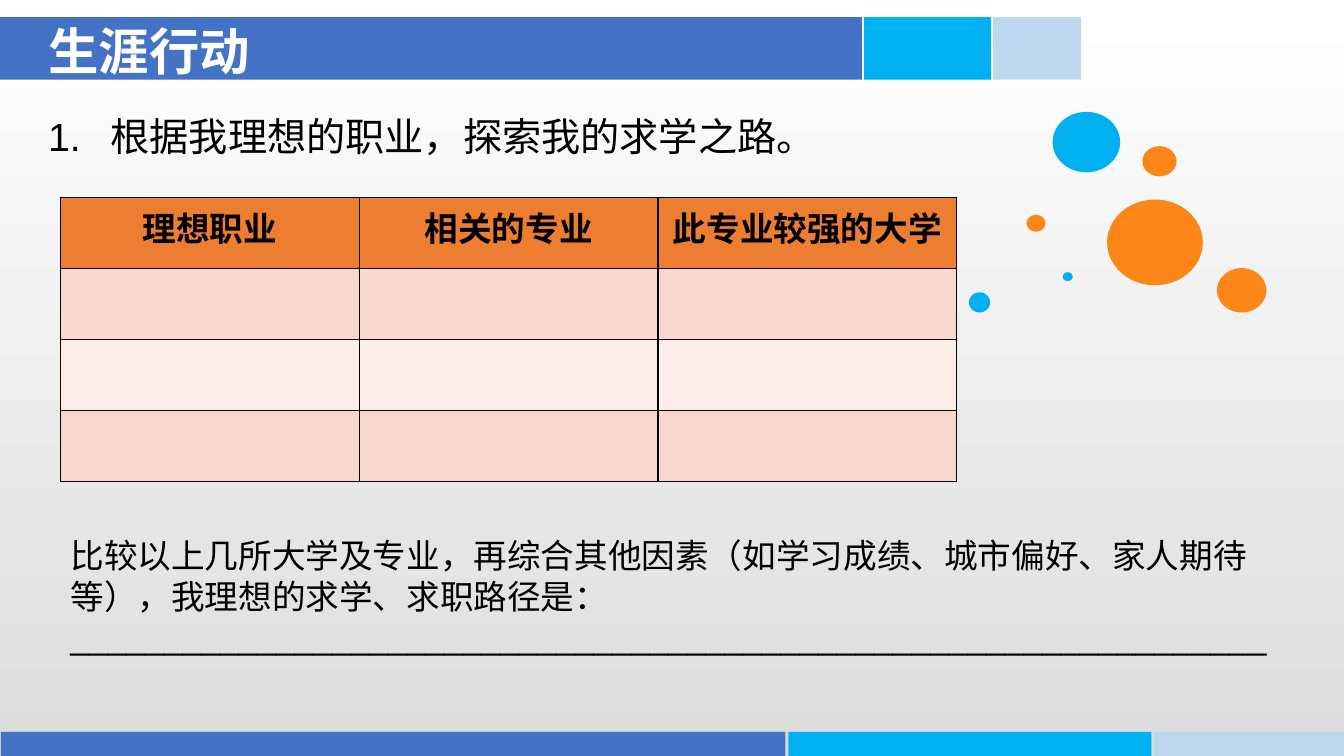
from lxml import etree
from pptx import Presentation
from pptx.dml.color import RGBColor
from pptx.enum.shapes import MSO_SHAPE
from pptx.enum.text import MSO_ANCHOR, PP_ALIGN
from pptx.oxml.ns import qn
from pptx.util import Inches, Pt

RECTANGLE, OVAL = MSO_SHAPE.RECTANGLE, MSO_SHAPE.OVAL
TOP, MIDDLE = MSO_ANCHOR.TOP, MSO_ANCHOR.MIDDLE
CENTER = PP_ALIGN.CENTER

BLACK = RGBColor(0x00, 0x00, 0x00)
WHITE = RGBColor(0xFF, 0xFF, 0xFF)
GREY = RGBColor(0xDC, 0xDC, 0xDC)
BLUE = RGBColor(0x44, 0x72, 0xC4)
CYAN = RGBColor(0x00, 0xB0, 0xF0)
PALE_BLUE = RGBColor(0xBD, 0xD7, 0xEE)
ORANGE = RGBColor(0xFC, 0x86, 0x18)
HEADER_ORANGE = RGBColor(0xED, 0x7D, 0x31)
BAND_DARK = RGBColor(0xF8, 0xD7, 0xCE)
BAND_LIGHT = RGBColor(0xFC, 0xEC, 0xE8)

LATIN = "Arial"
CJK = "Noto Sans CJK SC"

TITLE = "生涯行动"
TASK = "1.\t根据我理想的职业，探索我的求学之路。"
HEADERS = ["理想职业", "相关的专业", "此专业较强的大学"]
BLANK_ROWS = 3
QUESTION = "比较以上几所大学及专业，再综合其他因素（如学习成绩、城市偏好、家人期待等），我理想的求学、求职路径是："
ANSWER_LINE = "_" * 64

# left, top, width, height inside the cluster, colour
BUBBLES = [
    (0.00, 1.79, 0.21, 0.20, CYAN),
    (1.37, 0.87, 0.95, 0.85, ORANGE),
    (0.83, 0.00, 0.67, 0.60, CYAN),
    (2.46, 1.55, 0.49, 0.44, ORANGE),
    (1.72, 0.34, 0.34, 0.30, ORANGE),
    (0.57, 1.02, 0.19, 0.17, ORANGE),
    (0.93, 1.59, 0.10, 0.09, CYAN),
]


def paint_background(slide):
    fill = slide.background.fill
    fill.gradient()
    fill.gradient_angle = 270
    for stop, color in zip(fill.gradient_stops, (WHITE, GREY)):
        stop.color.rgb = color


def add_plain_shape(slide, kind, left, top, width, height, color):
    shape = slide.shapes.add_shape(
        kind, Inches(left), Inches(top), Inches(width), Inches(height))
    shape.shadow.inherit = False
    shape.fill.solid()
    shape.fill.fore_color.rgb = color
    shape.line.fill.background()


def add_band(slide, left, top, height, widths, gap):
    """Lay three coloured bars side by side."""
    for width, color in zip(widths, (BLUE, CYAN, PALE_BLUE)):
        add_plain_shape(slide, RECTANGLE, left, top, width, height, color)
        left += width + gap


def add_bubbles(slide, left, top):
    for x, y, width, height, color in BUBBLES:
        add_plain_shape(slide, OVAL, left + x, top + y, width, height, color)


def write_run(paragraph, text, size, color=BLACK, bold=False, latin=LATIN):
    run = paragraph.add_run()
    run.text = text
    run.font.size = Pt(size)
    run.font.bold = bold
    run.font.color.rgb = color
    run.font.name = latin
    etree.SubElement(run.font._element, qn("a:ea"), typeface=CJK)


def add_paragraph_box(slide, left, top, width, height, anchor=TOP):
    """Add a wrapping text box and return its first paragraph."""
    box = slide.shapes.add_textbox(
        Inches(left), Inches(top), Inches(width), Inches(height))
    box.text_frame.word_wrap = True
    box.text_frame.vertical_anchor = anchor
    return box.text_frame.paragraphs[0]


def add_task(slide, left, top, width, height, hang=0.62):
    """Add the numbered task, its wording set off by a hanging indent."""
    task = add_paragraph_box(slide, left, top, width, height)
    properties = task._p.get_or_add_pPr()
    properties.set("marL", str(Inches(hang)))
    properties.set("indent", str(-Inches(hang)))
    write_run(task, TASK, 28)


def add_cell_borders(cell):
    properties = cell._tc.get_or_add_tcPr()
    for side in ("a:lnL", "a:lnR", "a:lnT", "a:lnB"):
        line = etree.SubElement(properties, qn(side), w=str(Pt(1)))
        fill = etree.SubElement(line, qn("a:solidFill"))
        etree.SubElement(fill, qn("a:srgbClr"), val=str(BLACK))


def add_career_table(slide, left, top, width, height):
    table = slide.shapes.add_table(
        BLANK_ROWS + 1, len(HEADERS),
        Inches(left), Inches(top), Inches(width), Inches(height)).table
    for row_index, row in enumerate(table.rows):
        if row_index == 0:
            color = HEADER_ORANGE
        else:
            color = BAND_DARK if row_index % 2 else BAND_LIGHT
        for cell in row.cells:
            add_cell_borders(cell)
            cell.fill.solid()
            cell.fill.fore_color.rgb = color
    for cell, header in zip(table.rows[0].cells, HEADERS):
        heading = cell.text_frame.paragraphs[0]
        heading.alignment = CENTER
        write_run(heading, header, 24, bold=True)


def build_slide(slide):
    paint_background(slide)
    add_band(slide, 0, 0.17, 0.62, (8.55, 1.26, 0.87), 0.02)
    add_band(slide, 0.01, 7.26, 0.24, (7.78, 3.6, 1.89), 0.03)
    add_bubbles(slide, 9.61, 1.11)
    title = add_paragraph_box(slide, 0.38, 0.24, 3.88, 0.51, MIDDLE)
    write_run(title, TITLE, 36, WHITE, bold=True, latin=CJK)
    add_task(slide, 0.38, 1.07, 8.33, 0.57)
    add_career_table(slide, 0.6, 1.96, 8.89, 2.82)
    question = add_paragraph_box(slide, 0.6, 5.26, 12.31, 1.31)
    write_run(question, QUESTION + ANSWER_LINE, 24)


def main():
    presentation = Presentation()
    presentation.slide_width = Inches(13.33)
    presentation.slide_height = Inches(7.5)
    build_slide(presentation.slides.add_slide(presentation.slide_layouts[6]))
    presentation.save("out.pptx")


if __name__ == "__main__":
    main()
